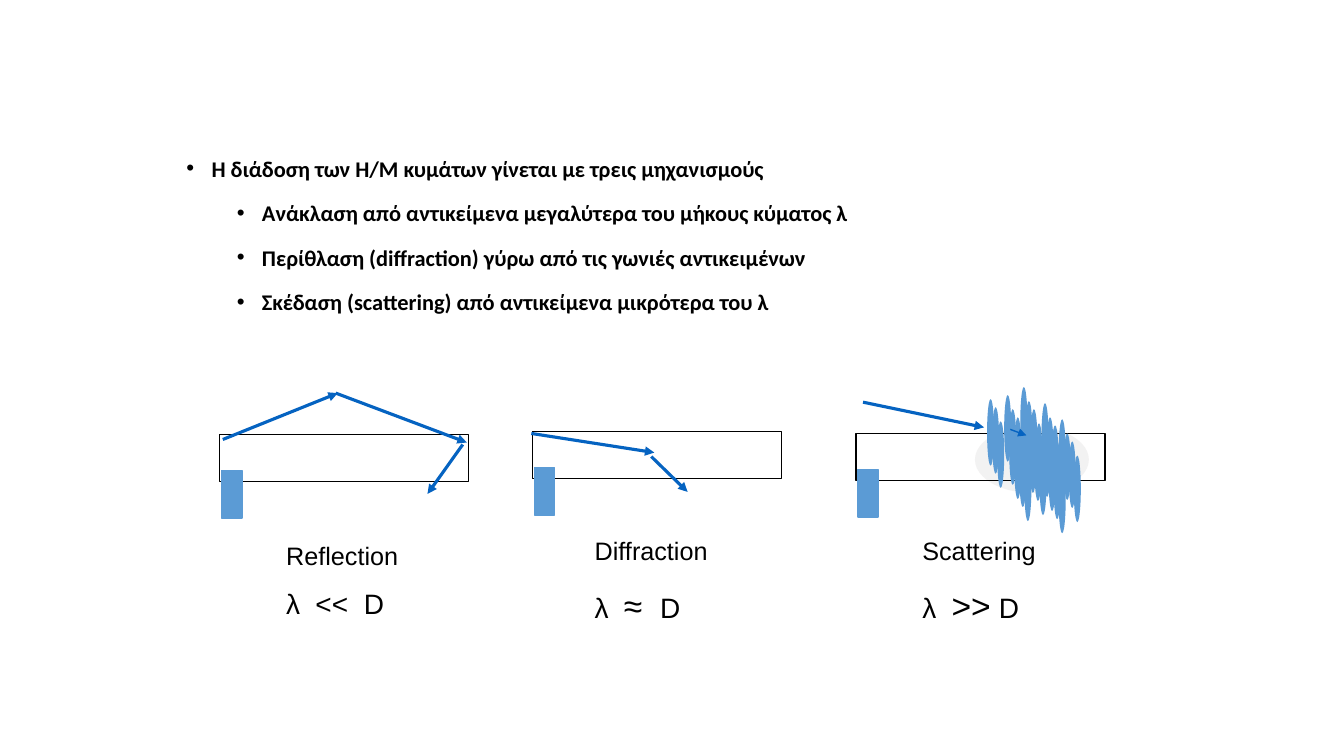
import pptx
import pptx.dml.color
import pptx.enum.shapes
import pptx.enum.text
import pptx.oxml.ns
import pptx.util
from lxml import etree

EMU_PER_PX = 9144
BLACK, SKY, BLUE, HAZE = "000000", "5B9BD5", "0563C1", "E7E6E6"
RECTANGLE = pptx.enum.shapes.MSO_SHAPE.RECTANGLE
OVAL = pptx.enum.shapes.MSO_SHAPE.OVAL

MECHANISMS = [
    (0, "Η διάδοση των Η/Μ κυμάτων γίνεται με τρεις μηχανισμούς"),
    (1, "Ανάκλαση από αντικείμενα μεγαλύτερα του μήκους κύματος λ"),
    (1, "Περίθλαση (diffraction) γύρω από τις γωνιές αντικειμένων"),
    (1, "Σκέδαση (scattering) από αντικείμενα μικρότερα του λ"),
]

# Each panel: street corner, rays, caption corner, name, relation, its size, tab stops
PANELS = [
    ((218, 431), [(221, 436, 335, 390), (333, 390, 463, 439), (459, 441, 424, 490)],
     (274, 531), "Reflection", "<<", 20, (29, 77)),
    ((528, 428), [(527, 430, 649, 449), (646, 453, 682, 488)],
     (580, 526), "Diffraction", "≈", 24, (29, 65)),
    ((849, 430), [(856, 399, 976, 424)],
     (905, 526), "Scattering", ">>", 24, (29, 76)),
]

# One swarm of particles, repeated at four offsets
SWARM = [(984, 404), (1006, 414), (1026, 431), (1043, 422),
         (1060, 438), (1045, 449), (1011, 437), (1022, 406)]
SWARM_OFFSETS = [(0, 0, 0), (5, 14, 0), (-10, -22, 1), (-5, -8, 0)]


def px(length):
    return pptx.util.Emu(length * EMU_PER_PX)


def color(hex_code):
    return pptx.dml.color.RGBColor.from_string(hex_code)


def add_element(parent, tag, **attributes):
    return etree.SubElement(parent, pptx.oxml.ns.qn(tag), attributes)


class SlideBuilder:
    def __init__(self, deck):
        self.slide = deck.slides.add_slide(deck.slide_layouts[6])

    def shape(self, kind, left, top, width, height, fill=None, line=None, weight=1, opacity=100):
        shape = self.slide.shapes.add_shape(kind, px(left), px(top), px(width), px(height))
        shape.shadow.inherit = False
        if fill:
            shape.fill.solid()
            shape.fill.fore_color.rgb = color(fill)
            if opacity < 100:
                fill_color = shape.fill._xPr.find(".//" + pptx.oxml.ns.qn("a:srgbClr"))
                add_element(fill_color, "a:alpha", val=str(opacity * 1000))
        else:
            shape.fill.background()
        if line:
            shape.line.color.rgb = color(line)
            shape.line.width = pptx.util.Pt(weight)
        else:
            shape.line.fill.background()

    def arrow(self, x1, y1, x2, y2, weight=2.25):
        arrow = self.slide.shapes.add_connector(
            pptx.enum.shapes.MSO_CONNECTOR.STRAIGHT, px(x1), px(y1), px(x2), px(y2))
        arrow.line.color.rgb = color(BLUE)
        arrow.line.width = pptx.util.Pt(weight)
        add_element(arrow.line._get_or_add_ln(), "a:tailEnd", type="triangle")
        add_element(arrow._element.spPr, "a:effectLst")

    def text_frame(self, left, top, width, height):
        box = self.slide.shapes.add_textbox(px(left), px(top), px(width), px(height))
        box.text_frame.word_wrap = True
        return box.text_frame

    def font(self, target, name, size, bold=False):
        target.font.name = name
        target.font.size = pptx.util.Pt(size)
        target.font.bold = bold
        target.font.color.rgb = color(BLACK)

    def bullets(self, left, top, width, height, items):
        frame = self.text_frame(left, top, width, height)
        for index, (level, text) in enumerate(items):
            para = frame.add_paragraph() if index else frame.paragraphs[0]
            para.text = text
            properties = para._p.get_or_add_pPr()
            properties.set("marL", str(px(25 + 50 * level)))
            properties.set("indent", str(px(-25)))
            add_element(properties, "a:buFont", typeface="Arial")
            add_element(properties, "a:buChar", char="•")
            para.level = level
            para.alignment = pptx.enum.text.PP_ALIGN.JUSTIFY
            para.line_spacing = 1.4
            if index:
                para.space_before = pptx.util.Pt(5)
            self.font(para, "Calibri", 16, bold=True)

    def caption(self, left, top, name, relation, relation_size, tab_stops):
        """Name the mechanism and, below it, relate wavelength to object size."""
        frame = self.text_frame(left, top, 140, 50 + 2 * relation_size)
        title = frame.paragraphs[0]
        title.text = name
        self.font(title, "Arial", 18)

        formula = frame.add_paragraph()
        tabs = add_element(formula._p.get_or_add_pPr(), "a:tabLst")
        for stop in tab_stops:
            add_element(tabs, "a:tab", pos=str(px(stop)), algn="l")
        formula.space_before = pptx.util.Pt(0.58 * relation_size)
        self.font(formula, "Arial", 20)
        for text, size in (("λ\t", 20), (relation, relation_size), ("\tD", 20)):
            span = formula.add_run()
            span.text = text
            self.font(span, "Arial", size)

    def panel(self, corner, rays, caption_corner, *caption):
        left, top = corner
        self.shape(RECTANGLE, left, top, 247, 47, line=BLACK, weight=0.75)
        self.shape(RECTANGLE, left + 2, top + 36, 20, 47, fill=SKY, line=SKY)
        for ray in rays:
            self.arrow(*ray)
        self.caption(*caption_corner, *caption)

    def particles(self):
        for shift_x, shift_y, first in SWARM_OFFSETS:
            for left, top in SWARM[first:]:
                self.shape(OVAL, left + shift_x, top + shift_y, 7, 66, fill=SKY)


def main():
    deck = pptx.Presentation()
    deck.slide_width, deck.slide_height = px(1333), px(750)
    page = SlideBuilder(deck)
    page.bullets(175, 138, 982, 178, MECHANISMS)
    page.shape(OVAL, 967, 423, 113, 66, fill=HAZE, opacity=50)
    for panel in PANELS:
        page.panel(*panel)
    page.particles()
    page.arrow(1002, 426, 1018, 432, weight=1)
    deck.save("out.pptx")


if __name__ == "__main__":
    main()
